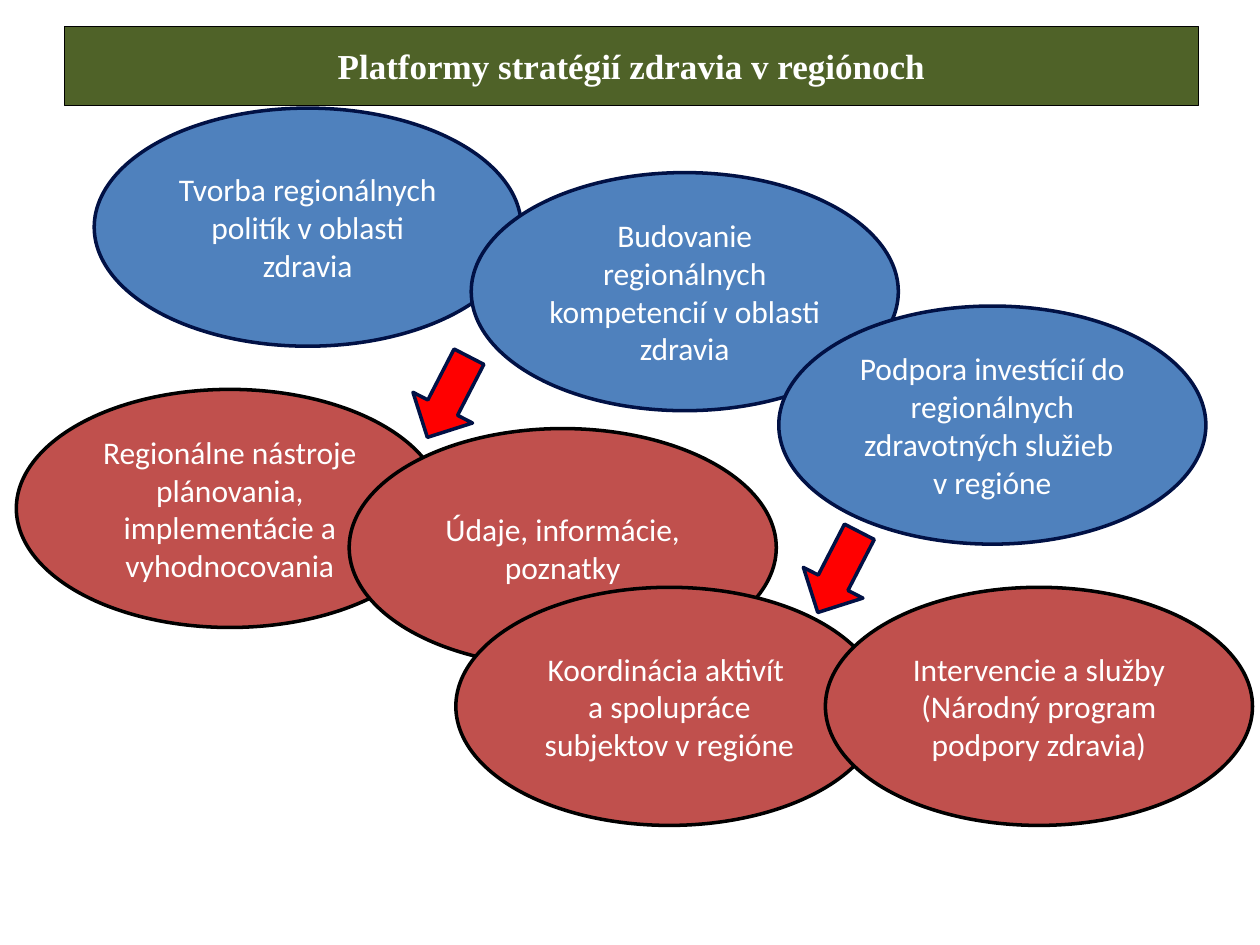
"""Build the slide on regional health strategy platforms."""
from pptx import Presentation
from pptx import util as u
from pptx.dml.color import RGBColor
from pptx.enum import shapes, text

WHITE = RGBColor(0xFF, 0xFF, 0xFF)
BLACK = RGBColor(0x00, 0x00, 0x00)
GREEN = RGBColor(0x4F, 0x62, 0x28)
BLUE = RGBColor(0x4F, 0x81, 0xBD)
NAVY = RGBColor(0x01, 0x11, 0x45)
BRICK = RGBColor(0xC0, 0x50, 0x4D)
RED = RGBColor(0xFF, 0x00, 0x00)

TITLE = "Platformy stratégií zdravia v regiónoch"
GOALS = [
    (1.9, 2.18, ["Tvorba regionálnych politík v oblasti zdravia"]),
    (9.5, 3.48, ["Budovanie regionálnych kompetencií v oblasti zdravia"]),
    (15.7, 6.17, ["Podpora investícií do regionálnych zdravotných služieb ", "v regióne"]),
]
TOOLS = [
    (0.33, 7.85, ["Regionálne nástroje plánovania, implementácie a vyhodnocovania"]),
    (7.04, 8.64, ["Údaje, informácie, poznatky"]),
    (9.19, 11.84, ["Koordinácia aktivít ", "a spolupráce subjektov v regióne"]),
    (16.64, 11.84, ["Intervencie a služby (Národný program podpory zdravia)"]),
]
GROUPS = [(GOALS, BLUE, NAVY), (TOOLS, BRICK, BLACK)]
ARROWS = [(8.36, 7.09), (16.23, 10.62)]
OVAL = (8.61, 4.8)
ARROW = (1.35, 1.83)
TURN = 27.3


def paint(shape, fill, line, width):
    shape.shadow.inherit = False
    shape.fill.solid()
    shape.fill.fore_color.rgb = fill
    shape.line.color.rgb = line
    shape.line.width = u.Pt(width)


def write(shape, lines, font, size, bold=False):
    frame = shape.text_frame
    frame.word_wrap = True
    frame.auto_size = text.MSO_AUTO_SIZE.NONE
    frame.vertical_anchor = text.MSO_ANCHOR.MIDDLE
    para = frame.paragraphs[0]
    para.alignment = text.PP_ALIGN.CENTER
    for index, line in enumerate(lines):
        if index:
            para.add_line_break()
        run = para.add_run()
        run.text = line
        run.font.name = font
        run.font.size = u.Pt(size)
        run.font.bold = bold
        run.font.color.rgb = WHITE


def place(slide, kind, left, top, size):
    return slide.shapes.add_shape(kind, *map(u.Cm, (left, top, *size)))


def main():
    deck = Presentation()
    deck.slide_width, deck.slide_height = u.Cm(25.4), u.Cm(19.05)
    slide = deck.slides.add_slide(deck.slide_layouts[5])

    title = slide.shapes.title
    title.left, title.top, title.width, title.height = map(u.Cm, (1.3, 0.53, 22.86, 1.6))
    paint(title, GREEN, BLACK, 0.75)
    write(title, [TITLE], "Times New Roman", 20, True)

    for items, fill, line in GROUPS:
        for left, top, lines in items:
            oval = place(slide, shapes.MSO_SHAPE.OVAL, left, top, OVAL)
            paint(oval, fill, line, 2)
            write(oval, lines, "Calibri", 18)

    for left, top in ARROWS:
        arrow = place(slide, shapes.MSO_SHAPE.DOWN_ARROW, left, top, ARROW)
        arrow.rotation = TURN
        paint(arrow, RED, NAVY, 2)

    deck.save("out.pptx")


if __name__ == "__main__":
    main()
